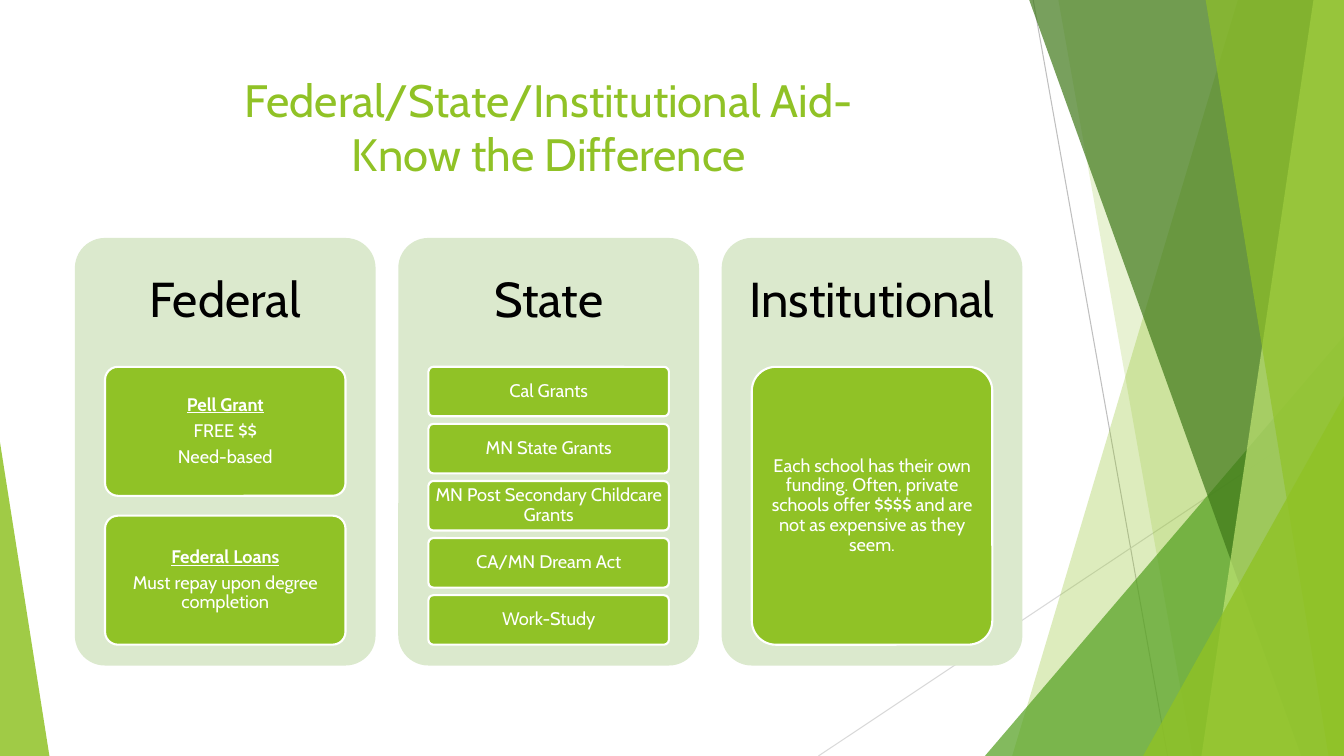
from dataclasses import dataclass
from typing import Union

from lxml.etree import SubElement
from pptx import Presentation
from pptx.dml.color import RGBColor
from pptx.enum.shapes import MSO_CONNECTOR, MSO_SHAPE
from pptx.enum.text import MSO_ANCHOR, PP_ALIGN
from pptx.oxml.ns import qn
from pptx.shapes.autoshape import Shape
from pptx.slide import Slide
from pptx.text.text import TextFrame
from pptx.util import Pt

COLORS = {
    "lime": "90C226",
    "leaf": "54A021",
    "forest": "3F7819",
    "pale_lime": "C0E474",
    "panel": "DBE9CD",
    "white": "FFFFFF",
    "black": "000000",
    "ray_dark": "BFBFBF",
    "ray_light": "D9D9D9",
}
FONT = "Cabin"
PAGE_WIDTH, PAGE_HEIGHT = 960, 540
PANEL_LEFT, PANEL_TOP = 53.5, 170
PANEL_WIDTH, PANEL_HEIGHT, PANEL_PITCH = 214.8, 305.4, 231
HEADING_HEIGHT = 91.6
CARD_INDENT, CARD_WIDTH = 21.5, 171.8
CARDS_TOP, CARDS_HEIGHT = 262, 198.5
GAP_RATIO = 2 / 13
CORNER = 0.1


@dataclass(frozen=True)
class Ray:
    start: tuple[float, float]
    end: tuple[float, float]
    color: str


@dataclass(frozen=True)
class Facet:
    top_left: float
    bottom_left: float
    color: str
    opacity: int


@dataclass(frozen=True)
class Wedge:
    left: float
    top: float
    width: float
    apex: float
    color: str
    opacity: int


@dataclass(frozen=True)
class Card:
    lines: tuple[str, ...]
    has_lead: bool = False


@dataclass(frozen=True)
class AidSource:
    name: str
    cards: tuple[Card, ...]


RAYS = (
    Ray((738, 0), (834, 540), "ray_dark"),
    Ray((960, 290), (584.6, 540), "ray_light"),
)
BACKDROP: tuple[Union[Facet, Wedge], ...] = (
    Facet(884.2, 723, "lime", 30),
    Facet(756, 851.8, "lime", 20),
    Wedge(703.5, 240, 256.5, 1, "leaf", 72),
    Facet(735.2, 929.5, "forest", 70),
    Facet(938.2, 858.2, "pale_lime", 70),
    Facet(861.2, 949, "lime", 65),
    Wedge(816.5, 283, 143.5, 1, "lime", 80),
    Wedge(0, 316, 35.3, 0, "lime", 85),
)
AID_SOURCES = (
    AidSource("Federal", (
        Card(("Pell Grant", "FREE $$", "Need-based"), True),
        Card(("Federal Loans", "Must repay upon degree completion"), True),
    )),
    AidSource("State", (
        Card(("Cal Grants",)),
        Card(("MN State Grants",)),
        Card(("MN Post Secondary Childcare Grants",)),
        Card(("CA/MN Dream Act",)),
        Card(("Work-Study",)),
    )),
    AidSource("Institutional", (
        Card((
            "Each school has their own funding. Often, private schools offer "
            "$$$$ and are not as expensive as they seem.",
        )),
    )),
)


def rgb(name: str) -> RGBColor:
    return RGBColor.from_string(COLORS[name])


def paint(shape: Shape, color: str, opacity: int = 100) -> None:
    shape.shadow.inherit = False
    shape.line.fill.background()
    shape.fill.solid()
    shape.fill.fore_color.rgb = rgb(color)
    if opacity < 100:
        tint = shape.element.spPr.find(qn("a:solidFill"))[0]
        SubElement(tint, qn("a:alpha"), val=str(opacity * 1000))


def write(frame: TextFrame, text: str, size: float, color: str,
          margins: tuple[float, float], spacing: float = 1, after: float = 0,
          anchor: MSO_ANCHOR = MSO_ANCHOR.MIDDLE) -> None:
    frame.word_wrap = True
    frame.vertical_anchor = anchor
    frame.margin_left = frame.margin_right = Pt(margins[0])
    frame.margin_top = frame.margin_bottom = Pt(margins[1])
    frame.text = text
    for paragraph in frame.paragraphs:
        paragraph.alignment = PP_ALIGN.CENTER
        paragraph.line_spacing = spacing
        paragraph.space_after = Pt(after)
        for run in paragraph.runs:
            run.font.name = FONT
            run.font.size = Pt(size)
            run.font.color.rgb = rgb(color)


def draw_ray(slide: Slide, ray: Ray) -> None:
    line = slide.shapes.add_connector(
        MSO_CONNECTOR.STRAIGHT, *map(Pt, ray.start), *map(Pt, ray.end))
    line.line.color.rgb = rgb(ray.color)
    line.line.width = Pt(0.75)
    SubElement(line.element.spPr, qn("a:effectLst"))


def draw_facet(slide: Slide, facet: Facet) -> None:
    outline = slide.shapes.build_freeform(Pt(facet.top_left), Pt(0))
    outline.add_line_segments([
        (Pt(PAGE_WIDTH), Pt(0)),
        (Pt(PAGE_WIDTH), Pt(PAGE_HEIGHT)),
        (Pt(facet.bottom_left), Pt(PAGE_HEIGHT)),
    ], close=True)
    paint(outline.convert_to_shape(), facet.color, facet.opacity)


def draw_wedge(slide: Slide, wedge: Wedge) -> None:
    triangle = slide.shapes.add_shape(
        MSO_SHAPE.ISOSCELES_TRIANGLE, Pt(wedge.left), Pt(wedge.top),
        Pt(wedge.width), Pt(PAGE_HEIGHT - wedge.top))
    triangle.adjustments[0] = wedge.apex
    paint(triangle, wedge.color, wedge.opacity)


def add_rounded(slide: Slide, left: float, top: float, width: float,
                height: float, color: str) -> Shape:
    box = slide.shapes.add_shape(
        MSO_SHAPE.ROUNDED_RECTANGLE, Pt(left), Pt(top), Pt(width), Pt(height))
    box.adjustments[0] = CORNER
    paint(box, color)
    return box


def draw_card(slide: Slide, card: Card, left: float, top: float, height: float) -> None:
    box = add_rounded(slide, left, top, CARD_WIDTH, height, "lime")
    box.line.color.rgb = rgb("white")
    box.line.width = Pt(1.5)
    write(box.text_frame, "\n".join(card.lines), 13, "white", (2.6, 2), 0.9, 4.55)
    if card.has_lead:
        lead = box.text_frame.paragraphs[0].runs[0].font
        lead.bold = lead.underline = True


def draw_aid_source(slide: Slide, source: AidSource, left: float) -> None:
    add_rounded(slide, left, PANEL_TOP, PANEL_WIDTH, PANEL_HEIGHT, "panel")
    heading = slide.shapes.add_textbox(
        Pt(left), Pt(PANEL_TOP), Pt(PANEL_WIDTH), Pt(HEADING_HEIGHT))
    write(heading.text_frame, source.name, 35, "black", (10.5, 10.5), 0.9, 12.25)
    count = len(source.cards)
    height = CARDS_HEIGHT / (count + (count - 1) * GAP_RATIO)
    for row, card in enumerate(source.cards):
        top = CARDS_TOP + row * height * (1 + GAP_RATIO)
        draw_card(slide, card, left + CARD_INDENT, top, height)


def main() -> None:
    deck = Presentation()
    deck.slide_width, deck.slide_height = Pt(PAGE_WIDTH), Pt(PAGE_HEIGHT)
    slide = deck.slides.add_slide(deck.slide_layouts[6])
    for ray in RAYS:
        draw_ray(slide, ray)
    for piece in BACKDROP:
        if isinstance(piece, Facet):
            draw_facet(slide, piece)
        else:
            draw_wedge(slide, piece)
    title = slide.shapes.add_textbox(Pt(53.5), Pt(48), Pt(677), Pt(104))
    write(title.text_frame, "Federal/State/Institutional Aid-\nKnow the Difference",
          32.4, "lime", (7.2, 3.6), anchor=MSO_ANCHOR.TOP)
    for column, source in enumerate(AID_SOURCES):
        draw_aid_source(slide, source, PANEL_LEFT + column * PANEL_PITCH)
    deck.save("out.pptx")


if __name__ == "__main__":
    main()
